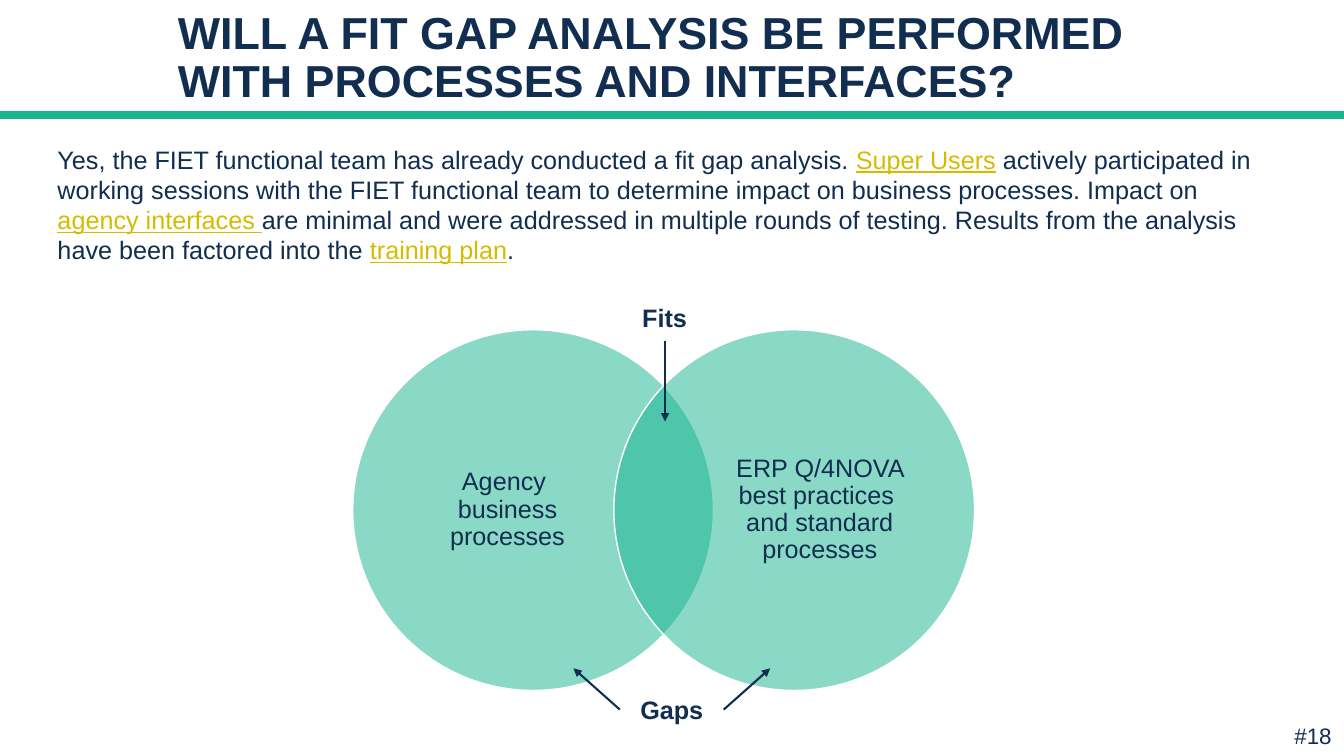
from dataclasses import dataclass

import lxml.etree
import pptx
import pptx.dml.color
import pptx.enum.shapes
import pptx.enum.text
import pptx.oxml.ns
import pptx.util

Cm = pptx.util.Cm
Pt = pptx.util.Pt
ALIGN = pptx.enum.text.PP_ALIGN
ANCHOR = pptx.enum.text.MSO_ANCHOR
qn = pptx.oxml.ns.qn

COLORS = {"navy": "112E50", "green": "16B58E", "gold": "D6BC00", "white": "FFFFFF"}
FONT = "Arial"
WIDTH, HEIGHT = 33.87, 19.05
CIRCLE_SIZE, CIRCLE_TOP = 9.09, 8.31


@dataclass
class Circle:
    left: float
    text_left: float
    text: str


@dataclass
class Label:
    left: float
    top: float
    width: float
    height: float
    text: str
    size: float = 18
    bold: bool = True


@dataclass
class Line:
    x1: float
    y1: float
    x2: float
    y2: float
    color: str = "navy"
    width: float = 1.5
    arrow: bool = True


RULE = Line(0, 2.9, WIDTH, 2.9, "green", 6, False)
CIRCLES = [
    Circle(8.89, 10.16, "Agency \vbusiness processes"),
    Circle(15.47, 18.03, "ERP Q/4NOVA best practices \vand standard processes"),
]
ARROWS = [
    Line(16.76, 8.59, 16.76, 10.62),
    Line(15.62, 17.88, 14.45, 16.84),
    Line(18.24, 17.88, 19.41, 16.84),
]
LABELS = [
    Label(15.44, 7.49, 2.62, 1.02, "Fits"),
    Label(15.62, 17.37, 2.62, 1.02, "Gaps"),
    Label(32.33, 18.06, 1.52, 0.94, "#18", 16, False),
]
# Each entry is a piece of the answer and whether it is highlighted.
ANSWER = [
    ("Yes, the FIET functional team has already conducted a fit gap analysis. ", False),
    ("Super Users", True),
    (" actively participated in working sessions with the FIET functional team "
     "to determine impact on business processes. Impact on ", False),
    ("agency interfaces ", True),
    ("are minimal and were addressed in multiple rounds of testing. "
     "Results from the analysis have been factored into the ", False),
    ("training plan", True),
    (".", False),
]


def rgb(name: str) -> pptx.dml.color.RGBColor:
    return pptx.dml.color.RGBColor.from_string(COLORS[name])


def format_run(r, size: float, color: str = "navy", bold: bool = False) -> None:
    r.font.name = FONT
    r.font.size = Pt(size)
    r.font.bold = bold
    r.font.color.rgb = rgb(color)


def add_text_box(s, left: float, top: float, width: float, height: float,
                 margins: bool = True):
    tf = s.shapes.add_textbox(Cm(left), Cm(top), Cm(width), Cm(height)).text_frame
    tf.word_wrap = True
    if not margins:
        tf.margin_left = tf.margin_top = tf.margin_right = tf.margin_bottom = 0
    return tf


def add_line(s, line: Line) -> None:
    c = s.shapes.add_connector(pptx.enum.shapes.MSO_CONNECTOR.STRAIGHT,
                               Cm(line.x1), Cm(line.y1), Cm(line.x2), Cm(line.y2))
    c.line.color.rgb = rgb(line.color)
    c.line.width = Pt(line.width)
    if line.arrow:
        lxml.etree.SubElement(c.line._get_or_add_ln(), qn("a:tailEnd"), type="triangle")
    lxml.etree.SubElement(c._element.spPr, qn("a:effectLst"))


def add_title(s) -> None:
    sp = s.shapes.title
    sp.left, sp.top, sp.width, sp.height = Cm(4.23), Cm(0.9), Cm(25.4), Cm(1.93)
    tf = sp.text_frame
    tf.text = "WILL A FIT GAP ANALYSIS BE PERFORMED WITH PROCESSES AND INTERFACES?"
    tf.auto_size = pptx.enum.text.MSO_AUTO_SIZE.NONE
    tf.vertical_anchor = ANCHOR.BOTTOM
    p = tf.paragraphs[0]
    p.alignment = ALIGN.LEFT
    p.line_spacing = 0.9
    format_run(p.runs[0], 32, bold=True)


def add_answer(s) -> None:
    p = add_text_box(s, 1.45, 3.63, 30.58, 3.15, margins=False).paragraphs[0]
    for text, highlighted in ANSWER:
        r = p.add_run()
        r.text = text
        format_run(r, 18, "gold" if highlighted else "navy")
        r.font.underline = highlighted


def add_circle(s, circle: Circle) -> None:
    """Draw a half-transparent circle and the text inside it."""
    sp = s.shapes.add_shape(pptx.enum.shapes.MSO_SHAPE.OVAL, Cm(circle.left),
                            Cm(CIRCLE_TOP), Cm(CIRCLE_SIZE), Cm(CIRCLE_SIZE))
    sp.shadow.inherit = False
    sp.fill.solid()
    sp.fill.fore_color.rgb = rgb("green")
    fill = sp._element.spPr.find(qn("a:solidFill"))
    lxml.etree.SubElement(fill[0], qn("a:alpha"), val="50000")
    sp.line.color.rgb = rgb("white")
    sp.line.width = Pt(1)

    tf = add_text_box(s, circle.text_left, 9.37, 5.26, 6.96, margins=False)
    tf.text = circle.text
    tf.vertical_anchor = ANCHOR.MIDDLE
    p = tf.paragraphs[0]
    p.alignment = ALIGN.CENTER
    p.line_spacing = 0.9
    for r in p.runs:
        format_run(r, 18)


def add_label(s, label: Label) -> None:
    tf = add_text_box(s, label.left, label.top, label.width, label.height)
    tf.text = label.text
    p = tf.paragraphs[0]
    p.alignment = ALIGN.CENTER
    format_run(p.runs[0], label.size, bold=label.bold)


def main() -> None:
    prs = pptx.Presentation()
    prs.slide_width, prs.slide_height = Cm(WIDTH), Cm(HEIGHT)
    s = prs.slides.add_slide(prs.slide_layouts.get_by_name("Title Only"))
    add_line(s, RULE)
    add_title(s)
    add_answer(s)
    for circle in CIRCLES:
        add_circle(s, circle)
    for arrow in ARROWS:
        add_line(s, arrow)
    for label in LABELS:
        add_label(s, label)
    prs.save("out.pptx")


if __name__ == "__main__":
    main()
